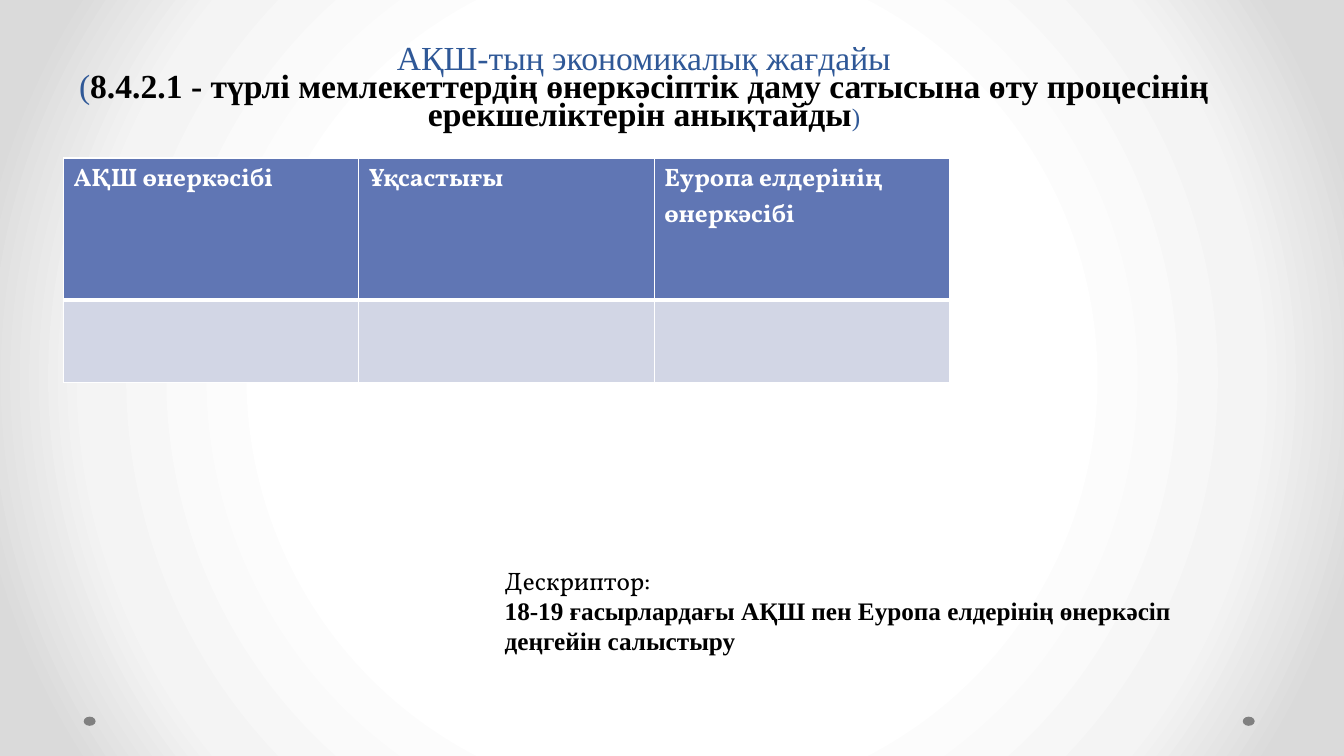
from dataclasses import dataclass

from pptx import Presentation
from pptx.dml.color import RGBColor
from pptx.enum.shapes import MSO_SHAPE as Preset
from pptx.enum.text import MSO_ANCHOR as Anchor, MSO_AUTO_SIZE as AutoSize, PP_ALIGN as Align
from pptx.oxml import parse_xml
from pptx.oxml.ns import nsdecls, qn
from pptx.util import Cm, Pt


@dataclass(frozen=True)
class Theme:
    """Colours, fonts and type sizes of the slide."""
    blue: str = "2F5897"
    black: str = "000000"
    white: str = "FFFFFF"
    header: str = "6076B4"
    body: str = "D2D6E5"
    dot: str = "808080"
    backdrop: tuple = ((50, "FFFFFF"), (76, "F4F4F4"), (92, "DADADA"))
    serif: str = "Times New Roman"
    display: str = "Vollkorn"
    large: int = 24
    normal: int = 18
    thin: int = 1
    thick: int = 3


THEME = Theme()
HEADINGS = ("АҚШ өнеркәсібі", "Ұқсастығы", "Еуропа елдерінің өнеркәсібі")


def apply(target, formats):
    """Set every attribute named in formats on target."""
    for name, value in formats.items():
        setattr(target, name, value)


def add_span(para, text, color, size=THEME.normal, font=THEME.serif, bold=False):
    """Add one formatted run to a paragraph."""
    span = para.add_run()
    span.text = text
    apply(span.font, {"name": font, "size": Pt(size), "bold": bold})
    span.font.color.rgb = RGBColor.from_string(color)


def paint_background(page):
    """Give the page a circular gradient."""
    page.background.fill.solid()
    stops = "".join(
        f'<a:gs pos="{place * 1000}"><a:srgbClr val="{color}"/></a:gs>'
        for place, color in THEME.backdrop
    )
    gradient = parse_xml(
        f'<a:gradFill {nsdecls("a")} rotWithShape="1"><a:gsLst>{stops}</a:gsLst>'
        '<a:path path="circle"><a:fillToRect l="50000" t="50000" r="50000" b="50000"/>'
        "</a:path></a:gradFill>"
    )
    properties = page.element.find(".//" + qn("p:bgPr"))
    properties.replace(properties[0], gradient)


def add_dot(page, left):
    """Add a small grey ellipse near the bottom edge."""
    dot = page.shapes.add_shape(Preset.OVAL, Cm(left), Cm(18.06), Cm(0.3), Cm(0.23))
    dot.shadow.inherit = False
    dot.fill.solid()
    dot.fill.fore_color.rgb = RGBColor.from_string(THEME.dot)
    dot.line.fill.background()


def fill_title(page):
    """Place the title and write its differently formatted parts."""
    title = page.shapes.title
    apply(title, {"left": Cm(1.65), "top": Cm(0.38), "width": Cm(29.16), "height": Cm(3.1)})
    frame = title.text_frame
    apply(frame, {"vertical_anchor": Anchor.BOTTOM, "auto_size": AutoSize.NONE, "word_wrap": True})
    para = frame.paragraphs[0]
    apply(para, {"alignment": Align.CENTER, "line_spacing": Pt(20)})
    add_span(para, "АҚШ-тың экономикалық жағдайы", THEME.blue, THEME.large)
    para.add_line_break()
    add_span(para, "(", THEME.blue, THEME.large)
    goal = "8.4.2.1 - түрлі мемлекеттердің өнеркәсіптік даму сатысына өту процесінің ерекшеліктерін анықтайды"
    add_span(para, goal, THEME.black, THEME.large, bold=True)
    add_span(para, ")", THEME.blue)


def style_cell(cell, color, top, bottom):
    """Give a cell white borders and a solid fill."""
    properties = cell._tc.get_or_add_tcPr()
    widths = {"L": THEME.thin, "R": THEME.thin, "T": top, "B": bottom}
    for side, width in widths.items():
        properties.append(parse_xml(
            f'<a:ln{side} {nsdecls("a")} w="{Pt(width)}"><a:solidFill>'
            f'<a:srgbClr val="{THEME.white}"/></a:solidFill></a:ln{side}>'
        ))
    cell.fill.solid()
    cell.fill.fore_color.rgb = RGBColor.from_string(color)


def add_comparison(page):
    """Add the comparison table with a heading row and an empty row."""
    table = page.shapes.add_table(
        2, len(HEADINGS), Cm(1.6), Cm(3.98), Cm(22.33), Cm(5.66)
    ).table
    for row, height in zip(table.rows, (3.58, 2.08)):
        row.height = Cm(height)
    for column, heading in enumerate(HEADINGS):
        head, blank = table.cell(0, column), table.cell(1, column)
        style_cell(head, THEME.header, THEME.thin, THEME.thick)
        style_cell(blank, THEME.body, THEME.thick, THEME.thin)
        para = head.text_frame.paragraphs[0]
        add_span(para, heading, THEME.white, font=THEME.display, bold=True)


def add_descriptor(page):
    """Add the descriptor label and its task."""
    box = page.shapes.add_textbox(Cm(12.47), Cm(14.12), Cm(19.74), Cm(3.33))
    frame = box.text_frame
    frame.word_wrap = True
    add_span(frame.paragraphs[0], "Дескриптор:", THEME.black, font=THEME.display)
    task = "18-19 ғасырлардағы АҚШ пен Еуропа елдерінің өнеркәсіп деңгейін салыстыру"
    add_span(frame.add_paragraph(), task, THEME.black, bold=True)


def main():
    """Build and save the slide."""
    deck = Presentation()
    apply(deck, {"slide_width": Cm(33.87), "slide_height": Cm(19.05)})
    page = deck.slides.add_slide(deck.slide_layouts.get_by_name("Title Only"))
    paint_background(page)
    for left in (31.32, 2.11):
        add_dot(page, left)
    fill_title(page)
    add_comparison(page)
    add_descriptor(page)
    deck.save("out.pptx")


if __name__ == "__main__":
    main()
